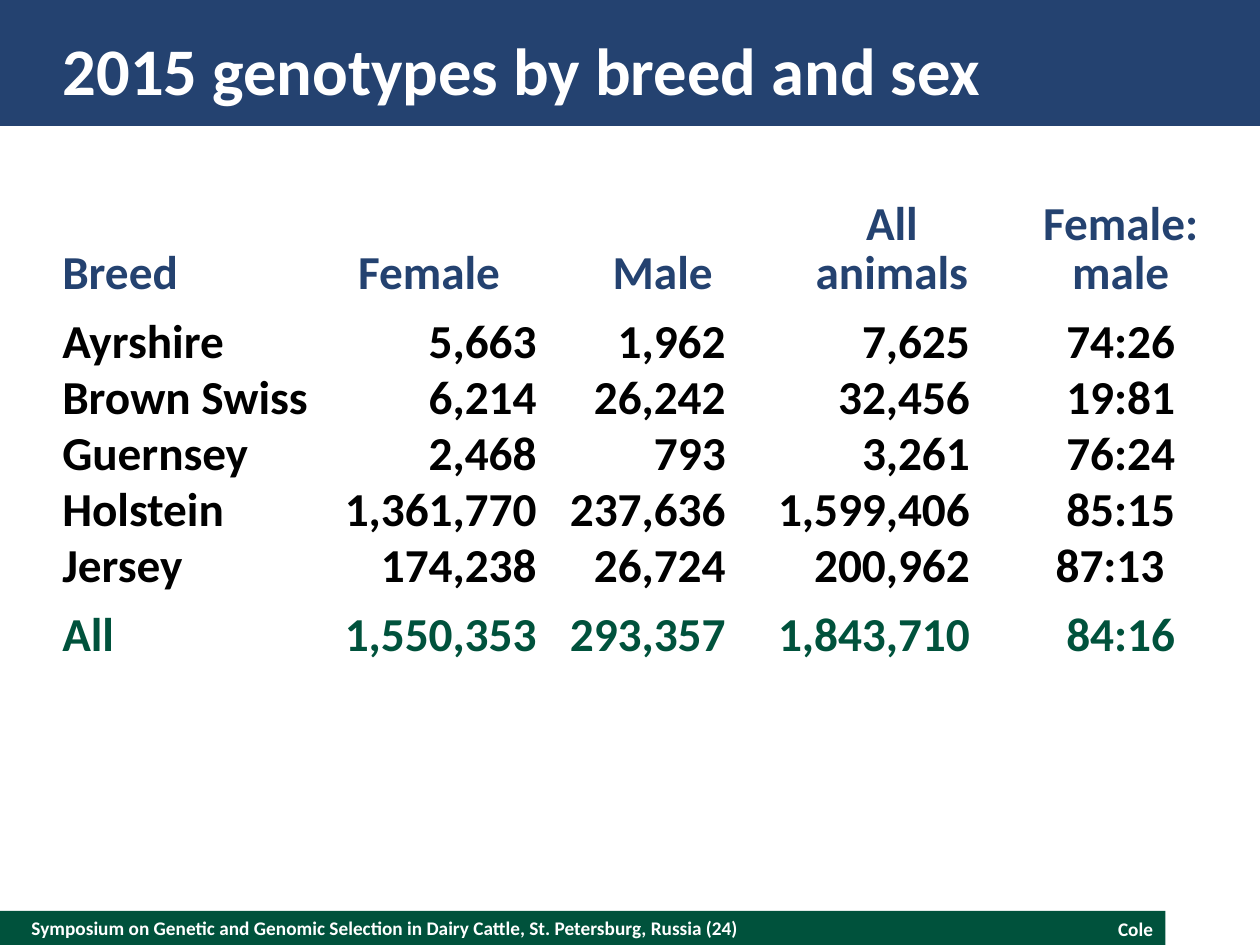
"""Build the slide of 2015 genotype counts by breed and sex."""
from pptx import Presentation
from pptx.dml.color import RGBColor
from pptx.enum import shapes, text
from pptx.util import Pt

NAVY = RGBColor(0x24, 0x42, 0x70)
GREEN = RGBColor(0x00, 0x52, 0x3C)
WHITE = RGBColor(0xFF, 0xFF, 0xFF)
BLACK = RGBColor(0x00, 0x00, 0x00)
LEFT, CENTER, RIGHT = text.PP_ALIGN.LEFT, text.PP_ALIGN.CENTER, text.PP_ALIGN.RIGHT
MIDDLE, TOP = text.MSO_ANCHOR.MIDDLE, text.MSO_ANCHOR.TOP


def style(paragraph, size, color, align):
    paragraph.alignment = align
    paragraph.font.name = "Calibri"
    paragraph.font.size = Pt(size)
    paragraph.font.bold = True
    paragraph.font.color.rgb = color


def set_margins(target, left, top, right, bottom):
    target.margin_left, target.margin_top = Pt(left), Pt(top)
    target.margin_right, target.margin_bottom = Pt(right), Pt(bottom)


prs = Presentation()
prs.slide_width, prs.slide_height = Pt(720), Pt(540)
slide = prs.slides.add_slide(prs.slide_layouts[6])

for top, width, height, color in [(520.5, 666, 19.5, GREEN), (0, 720, 72, NAVY)]:
    band = slide.shapes.add_shape(
        shapes.MSO_SHAPE.RECTANGLE, Pt(0), Pt(top), Pt(width), Pt(height))
    band.shadow.inherit = False
    band.fill.solid()
    band.fill.fore_color.rgb = color
    band.line.fill.background()

labels = [
    ("Symposium on Genetic and Genomic Selection in Dairy Cattle, St. Petersburg, Russia (24)",
     (18, 520.5, 468, 19.5), 11, LEFT, MIDDLE, (0, 0, 0, 0)),
    ("Cole", (522, 520.5, 144, 20.6), 11, RIGHT, TOP, (7.2, 3.6, 7.2, 3.6)),
    ("2015 genotypes by breed and sex",
     (36, 14.4, 648, 50.4), 38, LEFT, MIDDLE, (0, 0, 0, 0)),
]
for wording, place, size, align, anchor, margins in labels:
    frame = slide.shapes.add_textbox(*map(Pt, place)).text_frame
    frame.word_wrap = True
    frame.vertical_anchor = anchor
    set_margins(frame, *margins)
    frame.text = wording
    style(frame.paragraphs[0], size, WHITE, align)

counts = [
    ("Breed", "Female", "Male", "All\nanimals", "Female:\nmale"),
    ("Ayrshire", "5,663", "1,962", "7,625", "74:26"),
    ("Brown Swiss", "6,214", "26,242", "32,456", "19:81"),
    ("Guernsey", "2,468", "793", "3,261", "76:24"),
    ("Holstein", "1,361,770", "237,636", "1,599,406", "85:15"),
    ("Jersey", "174,238", "26,724", "200,962", "87:13"),
    ("All", "1,550,353", "293,357", "1,843,710", "84:16"),
]
column_widths = [153.5, 123, 126, 154, 107.5]
row_heights = [56, 39.2, 32, 32, 32, 32, 39.2]
row_colors = [NAVY] + [BLACK] * 5 + [GREEN]
body_aligns = [LEFT, RIGHT, RIGHT, RIGHT, CENTER]
header_margins = [(5.4, 5.4), (0, 0), (18, 0), (0, 0), (5.4, 5.4)]
body_margins = [(5.4, 5.4), (0, 0), (0, 18), (0, 32.4), (5.4, 5.4)]

genotypes = slide.shapes.add_table(
    len(counts), len(column_widths), Pt(30.2), Pt(116.6),
    Pt(sum(column_widths)), Pt(sum(row_heights))).table
genotypes.first_row = genotypes.horz_banding = False
for column, width in zip(genotypes.columns, column_widths):
    column.width = Pt(width)

for r, (row, breed_counts) in enumerate(zip(genotypes.rows, counts)):
    row.height = Pt(row_heights[r])
    header = r == 0
    for c, (cell, wording) in enumerate(zip(row.cells, breed_counts)):
        cell.fill.background()
        cell.vertical_anchor = text.MSO_ANCHOR.BOTTOM
        left, right = (header_margins if header else body_margins)[c]
        if wording == "87:13":
            right += 12.2
        set_margins(cell, left, 7.2 if r in (1, 6) else 0, right, 0)
        cell.text = wording
        align = CENTER if header and c else body_aligns[c]
        for paragraph in cell.text_frame.paragraphs:
            paragraph.line_spacing = Pt(28 if header else 32)
            style(paragraph, 27, row_colors[r], align)

prs.save("out.pptx")
